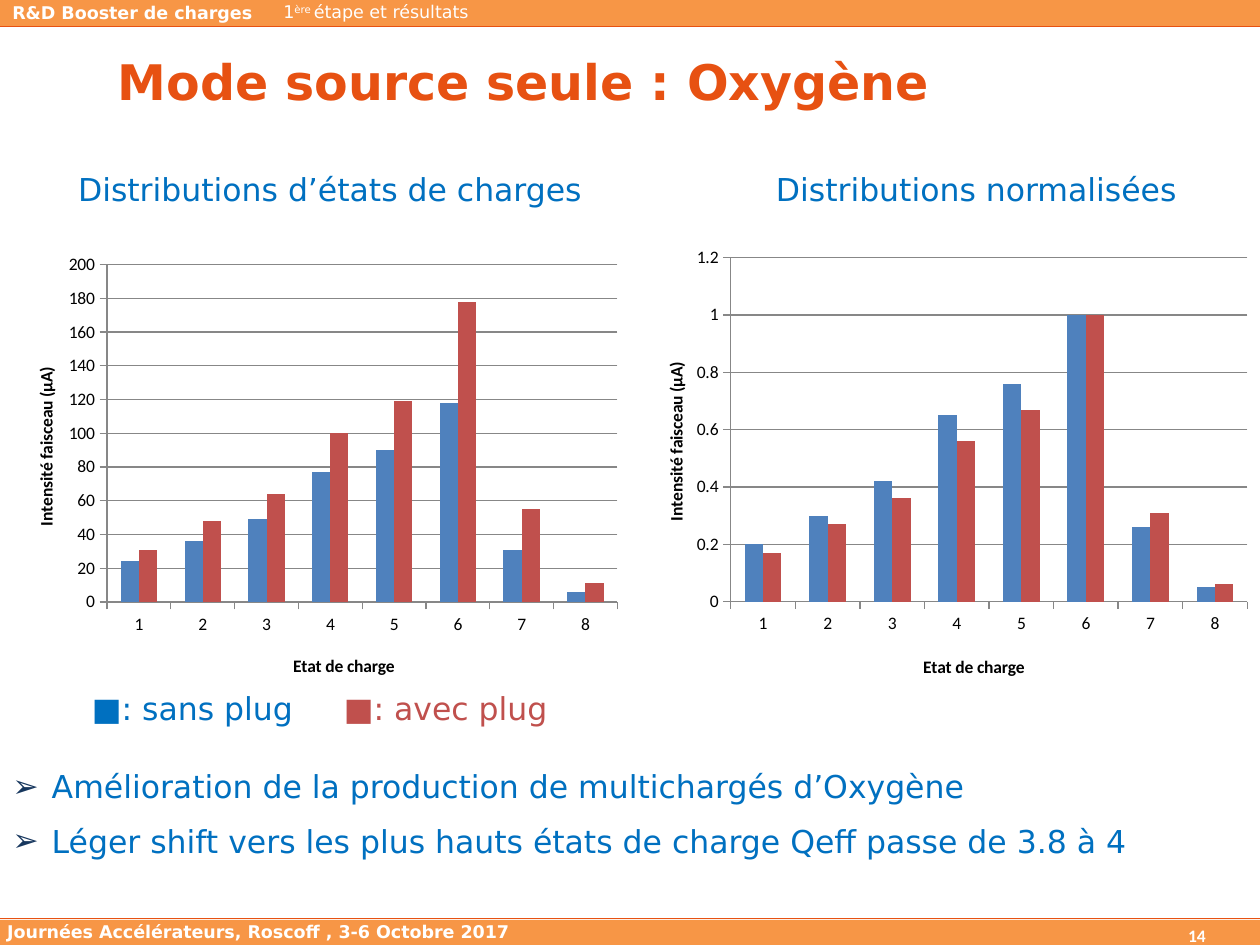
from lxml.etree import SubElement
from pptx import Presentation
from pptx.chart.data import CategoryChartData
from pptx.dml.color import RGBColor
from pptx.enum.chart import XL_CHART_TYPE as ChartType, XL_TICK_MARK as TickMark
from pptx.enum.shapes import MSO_CONNECTOR as Connector, MSO_SHAPE as Shape
from pptx.enum.text import MSO_ANCHOR as Anchor, PP_ALIGN as Align
from pptx.oxml.ns import qn
from pptx.util import Pt

ORANGE = RGBColor(0xF7, 0x96, 0x46)
DARK_ORANGE = RGBColor(0xE7, 0x51, 0x12)
WHITE = RGBColor(0xFF, 0xFF, 0xFF)
BLACK = RGBColor(0, 0, 0)
BLUE = RGBColor(0x00, 0x70, 0xC0)
SERIES_BLUE = RGBColor(0x4F, 0x81, 0xBD)
SERIES_RED = RGBColor(0xC0, 0x50, 0x4D)
GREY = RGBColor(0x87, 0x87, 0x87)
BULLET_COLOUR = "17375E"

SANS, CALIBRI = "DejaVu Sans", "Calibri"
PAGE_WIDTH, PAGE_HEIGHT = 720, 540
BAND_HEIGHT = 15.2

CHARGES = [str(charge) for charge in range(1, 9)]
CURRENTS = [[24, 36, 49, 77, 90, 118, 31, 6],
            [31, 48, 64, 100, 119, 178, 55, 11]]
NORMALISED = [[0.2, 0.3, 0.42, 0.65, 0.76, 1, 0.26, 0.05],
              [0.17, 0.27, 0.36, 0.56, 0.67, 1, 0.31, 0.06]]


def add_box(page, left, top, width, height, wrap=True):
    box = page.shapes.add_textbox(Pt(left), Pt(top), Pt(width), Pt(height))
    box.text_frame.word_wrap = wrap
    return box.text_frame


def add_span(para, text, size, colour, bold=False, font=SANS):
    span = para.add_run()
    span.text = text
    span.font.name = font
    span.font.size = Pt(size)
    span.font.bold = bold
    span.font.color.rgb = colour
    return span


def add_band(page, top, line_y):
    band = page.shapes.add_shape(Shape.RECTANGLE, 0, Pt(top), Pt(PAGE_WIDTH), Pt(BAND_HEIGHT))
    band.shadow.inherit = False
    band.fill.solid()
    band.fill.fore_color.rgb = ORANGE
    band.line.fill.background()
    rule = page.shapes.add_connector(Connector.STRAIGHT, 0, Pt(line_y), Pt(PAGE_WIDTH), Pt(line_y))
    rule.line.color.rgb = DARK_ORANGE
    rule.line.width = Pt(0.75)
    SubElement(rule._element.spPr, qn("a:effectLst"))


def add_header(page):
    add_band(page, 0, BAND_HEIGHT)
    project = add_box(page, 0, -2.2, 598, BAND_HEIGHT).paragraphs[0]
    add_span(project, "R&D Booster de charges", 10, WHITE, bold=True)
    section = add_box(page, 154.8, -1.5, 385, 17).paragraphs[0]
    section.line_spacing = 0.9
    add_span(section, "1", 10, WHITE)
    ordinal = add_span(section, "ère ", 10, WHITE)
    ordinal._r.get_or_add_rPr().set("baseline", "30000")
    add_span(section, "étape et résultats", 10, WHITE)


def add_footer(page):
    add_band(page, 525.6, 525)
    event = add_box(page, -3, 522.7, 306, 19.4, wrap=False).paragraphs[0]
    add_span(event, "Journées Accélérateurs, Roscoff , 3-6 Octobre 2017", 10, WHITE, bold=True)
    number = add_box(page, 671.8, 525, 47.5, BAND_HEIGHT).paragraphs[0]
    add_span(number, "14", 10, WHITE, bold=True, font=CALIBRI)


def add_title(page, left, top, width, height):
    frame = add_box(page, left, top, width, height)
    frame.vertical_anchor = Anchor.MIDDLE
    para = frame.paragraphs[0]
    para.alignment = Align.CENTER
    add_span(para, "Mode source seule : Oxygène", 28, DARK_ORANGE, bold=True)


def add_heading(page, text, left, top, width):
    add_span(add_box(page, left, top, width, 29).paragraphs[0], text, 18, BLUE)


def set_layout(parent, index, **settings):
    """Place a chart part by hand, in fractions of the chart's size."""
    for old in parent.findall(qn("c:layout")):
        parent.remove(old)
    layout = parent.makeelement(qn("c:layout"), {})
    parent.insert(index, layout)
    manual = SubElement(layout, qn("c:manualLayout"))
    for tag, value in settings.items():
        SubElement(manual, qn(f"c:{tag}")).set("val", str(value))


def style_axis(axis, title, x, y):
    axis.major_tick_mark = TickMark.OUTSIDE
    axis.minor_tick_mark = TickMark.NONE
    axis.format.line.color.rgb = GREY
    axis.format.line.width = Pt(0.75)
    span = axis.axis_title.text_frame.paragraphs[0].add_run()
    span.text = title
    span.font.name = CALIBRI
    span.font.size = Pt(10)
    span.font.bold = True
    span.font.color.rgb = BLACK
    set_layout(axis.axis_title._element, 1, xMode="edge", yMode="edge", x=x, y=y)


def add_column_chart(page, values, maximum, step, plot_x, left, top, width, height):
    data = CategoryChartData()
    data.categories = CHARGES
    for index, row in enumerate(values, 1):
        data.add_series(f"Series {index}", row)
    chart = page.shapes.add_chart(ChartType.COLUMN_CLUSTERED, Pt(left), Pt(top),
                                  Pt(width), Pt(height), data).chart
    chart.has_title = False
    chart.has_legend = False
    chart.font.name = CALIBRI
    chart.font.size = Pt(10)
    chart.font.color.rgb = BLACK
    plot = chart.plots[0]
    plot.gap_width = 150
    plot.overlap = 0
    plot.vary_by_categories = False
    for series, colour in zip(plot.series, (SERIES_BLUE, SERIES_RED)):
        series.format.fill.solid()
        series.format.fill.fore_color.rgb = colour
    style_axis(chart.category_axis, "Etat de charge", 0.46, 0.9)
    axis = chart.value_axis
    style_axis(axis, "Intensité faisceau (µA)", 0.05, 0.26)
    axis.minimum_scale, axis.maximum_scale, axis.major_unit = 0, maximum, step
    axis.has_major_gridlines = True
    axis.major_gridlines.format.line.color.rgb = GREY
    axis.major_gridlines.format.line.width = Pt(0.75)
    plot_area = chart._chartSpace.chart.plotArea
    set_layout(plot_area, 0, layoutTarget="inner", xMode="edge", yMode="edge",
               x=plot_x, y=0.04, w=round(0.98 - plot_x, 2), h=0.75)


def add_legend(page, left, top, width):
    para = add_box(page, left, top, width, 29).paragraphs[0]
    tabs = SubElement(para._p.get_or_add_pPr(), qn("a:tabLst"))
    SubElement(tabs, qn("a:tab"), pos=str(Pt(144)), algn="l")
    add_span(para, "■: sans plug\t", 18, BLUE)
    add_span(para, "■: avec plug", 18, SERIES_RED)


def add_conclusions(page, lines, left, top, width, height):
    frame = add_box(page, left, top, width, height)
    for index, line in enumerate(lines):
        para = frame.paragraphs[0] if index == 0 else frame.add_paragraph()
        if index:
            para.space_before = Pt(3.6)
        para.space_after = Pt(6)
        props = para._p.get_or_add_pPr()
        props.set("marL", str(Pt(22.5)))
        props.set("indent", str(Pt(-22.5)))
        colour = SubElement(props, qn("a:buClr"))
        SubElement(colour, qn("a:srgbClr"), val=BULLET_COLOUR)
        SubElement(props, qn("a:buFont"), typeface=SANS)
        SubElement(props, qn("a:buChar"), char="➢")
        add_span(para, line, 18, BLUE)


def main():
    deck = Presentation()
    deck.slide_width, deck.slide_height = Pt(PAGE_WIDTH), Pt(PAGE_HEIGHT)
    page = deck.slides.add_slide(deck.slide_layouts[6])
    add_header(page)
    add_footer(page)
    add_title(page, 0, 15, 598, 63)
    add_heading(page, "Distributions d’états de charges", 37.5, 93.6, 322)
    add_heading(page, "Distributions normalisées", 436.3, 93.6, 260)
    add_column_chart(page, CURRENTS, 200, 20, 0.17, 0, 141, 360, 257)
    add_column_chart(page, NORMALISED, 1.2, 0.2, 0.16, 360, 136.8, 360, 262)
    add_legend(page, 45.4, 390.2, 314)
    add_conclusions(page, ["Amélioration de la production de multichargés d’Oxygène",
                           "Léger shift vers les plus hauts états de charge Qeff passe de 3.8 à 4"],
                    0, 435, PAGE_WIDTH, 75)
    deck.save("out.pptx")


if __name__ == "__main__":
    main()
